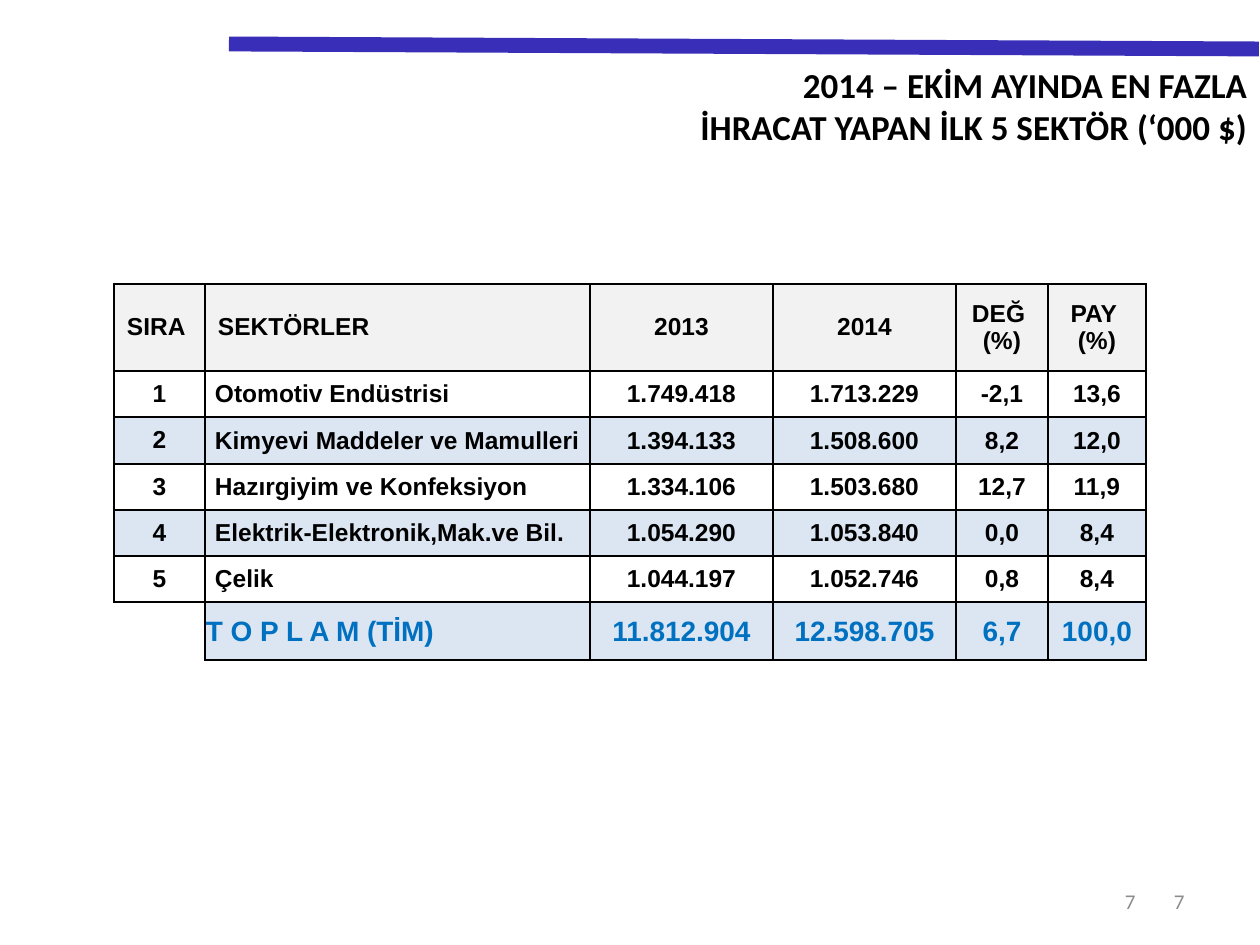
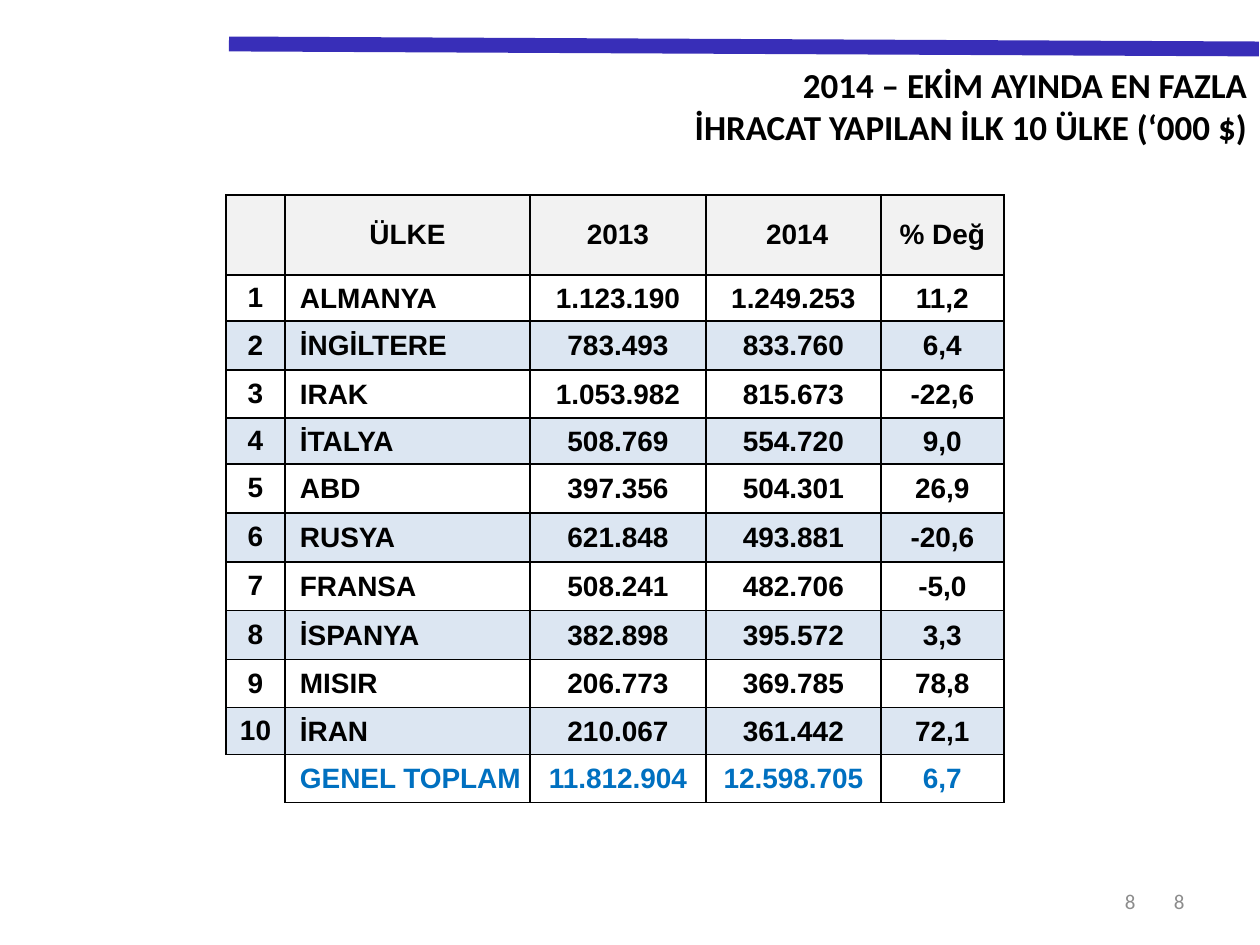
"""Build two export ranking slides, each with a band, a title, a table and page numbers."""
from lxml import etree
from pptx import Presentation
from pptx.dml.color import RGBColor
from pptx.enum.shapes import MSO_CONNECTOR
from pptx.enum.text import MSO_ANCHOR, MSO_AUTO_SIZE, PP_ALIGN
from pptx.oxml.ns import qn
from pptx.util import Pt

INK, BLUE, BAND, GREY = "000000", "0070C0", "382EB8", "8C8C8C"
HEAD_FILL, STRIPE, WHITE = "F2F2F2", "DCE6F2", "FFFFFF"


def px(n):
    return round(n * 914400 / 126)


def style(tf, size, font, color, bold, align):
    for p in tf.paragraphs:
        p.alignment = align
        for r in p.runs:
            r.font.size, r.font.name, r.font.bold = Pt(size), font, bold
            r.font.color.rgb = RGBColor.from_string(color)


pages = [
    dict(
        number="7",
        title="2014 – EKİM AYINDA EN FAZLA\nİHRACAT YAPAN İLK 5 SEKTÖR (‘000 $)",
        left=114, top=284, size=14, total_size=16,
        name_inset=10, total_inset=1, left_heads=(0, 1),
        cols=[91, 385, 183, 183, 92, 98],
        heights=[87, 46, 47, 46, 46, 46, 58],
        rows=[
            ["SIRA", "SEKTÖRLER", "2013", "2014", "DEĞ \n(%)", "PAY \n(%)"],
            ["1", "Otomotiv Endüstrisi", "1.749.418", "1.713.229", "-2,1", "13,6"],
            ["2", "Kimyevi Maddeler ve Mamulleri", "1.394.133", "1.508.600", "8,2", "12,0"],
            ["3", "Hazırgiyim ve Konfeksiyon", "1.334.106", "1.503.680", "12,7", "11,9"],
            ["4", "Elektrik-Elektronik,Mak.ve Bil.", "1.054.290", "1.053.840", "0,0", "8,4"],
            ["5", "Çelik", "1.044.197", "1.052.746", "0,8", "8,4"],
            ["", "T O P L A M (TİM)", "11.812.904", "12.598.705", "6,7", "100,0"],
        ],
    ),
    dict(
        number="8",
        title="2014 – EKİM AYINDA EN FAZLA\nİHRACAT YAPILAN İLK 10 ÜLKE (‘000 $)",
        left=226, top=195, size=16, total_size=16,
        name_inset=15, total_inset=15, left_heads=(),
        cols=[59, 245, 176, 175, 123],
        heights=[80, 46, 49, 48, 46, 49, 49, 49, 49, 48, 47, 48],
        rows=[
            ["", "ÜLKE", "2013", " 2014", "% Değ"],
            ["1", "ALMANYA", "1.123.190", "1.249.253", "11,2"],
            ["2", "İNGİLTERE", "783.493", "833.760", "6,4"],
            ["3", "IRAK", "1.053.982", "815.673", "-22,6"],
            ["4", "İTALYA", "508.769", "554.720", "9,0"],
            ["5", "ABD", "397.356", "504.301", "26,9"],
            ["6", "RUSYA", "621.848", "493.881", "-20,6"],
            ["7", "FRANSA", "508.241", "482.706", "-5,0"],
            ["8", "İSPANYA", "382.898", "395.572", "3,3"],
            ["9", "MISIR", "206.773", "369.785", "78,8"],
            ["10", "İRAN", "210.067", "361.442", "72,1"],
            ["", "GENEL TOPLAM", "11.812.904", "12.598.705", "6,7"],
        ],
    ),
]

prs = Presentation()
prs.slide_width, prs.slide_height = px(1260), px(945)

for page in pages:
    s = prs.slides.add_slide(prs.slide_layouts[5])

    band = s.shapes.add_connector(MSO_CONNECTOR.STRAIGHT, px(229), px(44), px(1259), px(49))
    band.line.color.rgb = RGBColor.from_string(BAND)
    band.line.width = Pt(8.5)
    etree.SubElement(band._element.spPr, qn("a:effectLst"))

    for left, width in ((903, 294), (883, 265)):
        sp = s.shapes.add_textbox(px(left), px(876), px(width), px(50))
        tf = sp.text_frame
        tf.word_wrap = True
        tf.vertical_anchor = MSO_ANCHOR.MIDDLE
        tf.text = page["number"]
        style(tf, 12, "Calibri", GREY, False, PP_ALIGN.RIGHT)

    title = s.shapes.title
    title.left, title.top, title.width, title.height = px(134), px(57), px(1126), px(97)
    tf = title.text_frame
    tf.text = page["title"]
    tf.vertical_anchor = MSO_ANCHOR.TOP
    tf.auto_size = MSO_AUTO_SIZE.SHAPE_TO_FIT_TEXT
    style(tf, 20, "Calibri", INK, True, PP_ALIGN.RIGHT)

    rows, cols, heights = page["rows"], page["cols"], page["heights"]
    table = s.shapes.add_table(len(rows), len(cols), px(page["left"]), px(page["top"]),
                               px(sum(cols)), px(sum(heights))).table
    table.first_row = table.horz_banding = False
    for col, width in zip(table.columns, cols):
        col.width = px(width)
    for row, height in zip(table.rows, heights):
        row.height = px(height)

    last = len(rows) - 1
    for i, row in enumerate(rows):
        for j, text in enumerate(row):
            cell = table.cell(i, j)
            cell.text = text
            cell.vertical_anchor = MSO_ANCHOR.MIDDLE
            corner = i == last and j == 0
            if i == 0 or (j == 0 and not corner):
                insets = 13, 6, 13, 6
            elif j == 1:
                insets = page["total_inset" if i == last else "name_inset"], 1, 1, 0
            else:
                insets = 1, 1, 1, 0
            (cell.margin_left, cell.margin_top,
             cell.margin_right, cell.margin_bottom) = map(px, insets)

            to_left = j in page["left_heads"] if i == 0 else j == 1
            style(cell.text_frame, page["total_size" if i == last else "size"], "Arial",
                  BLUE if i == last else INK, True,
                  PP_ALIGN.LEFT if to_left else PP_ALIGN.CENTER)

            for side in "LRTB":
                ln = etree.SubElement(cell._tc.get_or_add_tcPr(), qn("a:ln" + side), w="12700")
                if corner and side in "LB":
                    etree.SubElement(ln, qn("a:noFill"))
                else:
                    fill = etree.SubElement(ln, qn("a:solidFill"))
                    etree.SubElement(fill, qn("a:srgbClr"), val=INK)
            if corner:
                cell.fill.background()
            else:
                cell.fill.solid()
                color = HEAD_FILL if i == 0 else WHITE if i % 2 else STRIPE
                cell.fill.fore_color.rgb = RGBColor.from_string(color)

prs.save("out.pptx")
